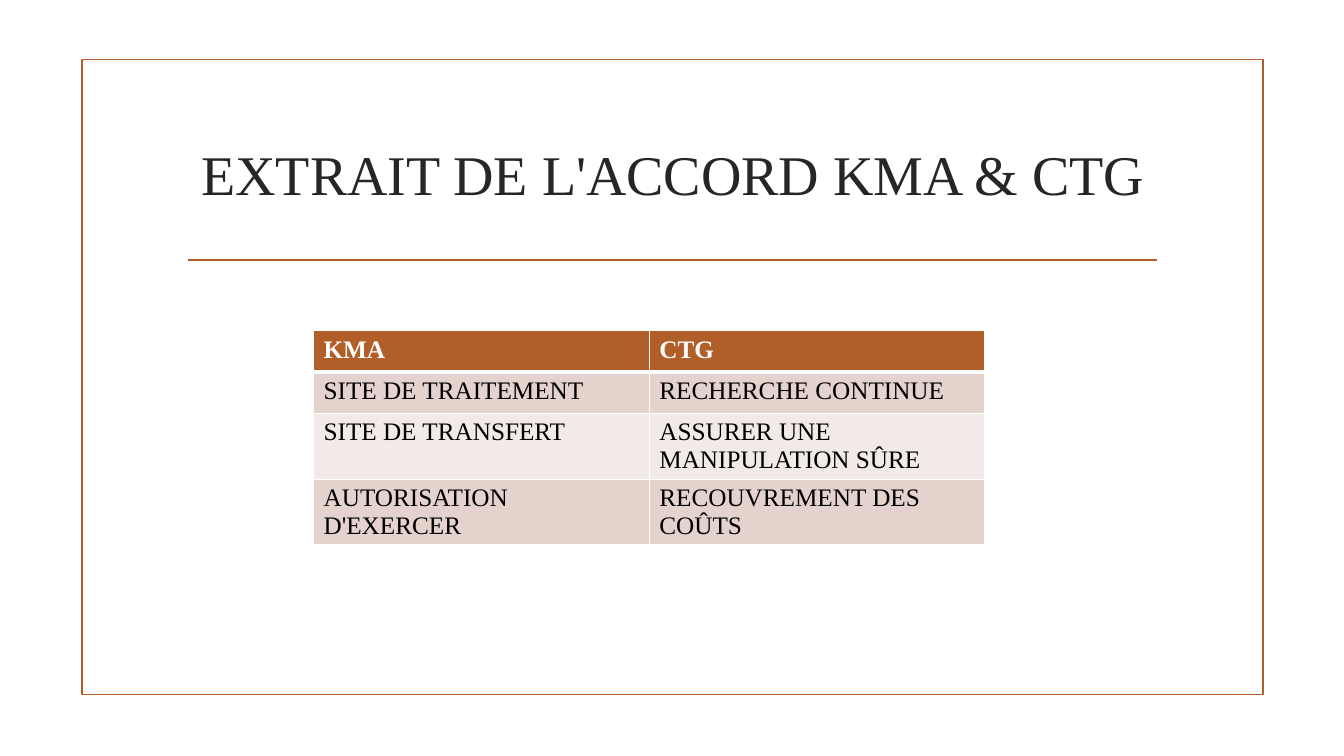
from lxml.etree import SubElement
from pptx import Presentation
from pptx.dml.color import RGBColor
from pptx.enum.shapes import MSO_CONNECTOR as Connector, MSO_SHAPE as Shape
from pptx.enum.text import MSO_ANCHOR as Anchor, PP_ALIGN as Align
from pptx.oxml.ns import qn
from pptx.util import Inches, Pt

COLORS = {
    "accent": "B15E28",
    "title": "262626",
    "text": "000000",
    "white": "FFFFFF",
    "band_dark": "E4D2CD",
    "band_light": "F2EAE8",
}

AGREEMENT = [
    ("KMA", "CTG"),
    ("SITE DE TRAITEMENT", "RECHERCHE CONTINUE"),
    ("SITE DE TRANSFERT", "ASSURER UNE MANIPULATION SÛRE"),
    ("AUTORISATION D'EXERCER", "RECOUVREMENT DES COÛTS"),
]


def rgb(name):
    return RGBColor.from_string(COLORS[name])


class SlideBuilder:
    font = "Times New Roman"
    line_width = Pt(1.25)

    def __init__(self, slide):
        self.slide = slide

    def add_text(self, frame, text, size, color, bold=False, align=Align.LEFT):
        paragraph = frame.paragraphs[0]
        paragraph.alignment = align
        run = paragraph.add_run()
        run.text = text
        run.font.name = self.font
        run.font.size = Pt(size)
        run.font.bold = bold
        run.font.color.rgb = rgb(color)

    def style_line(self, line):
        line.color.rgb = rgb("accent")
        line.width = self.line_width

    def frame(self, left, top, width, height):
        border = self.slide.shapes.add_shape(
            Shape.RECTANGLE, Inches(left), Inches(top), Inches(width), Inches(height))
        border.shadow.inherit = False
        border.fill.background()
        self.style_line(border.line)

    def rule(self, left, right, y):
        divider = self.slide.shapes.add_connector(
            Connector.STRAIGHT, Inches(left), Inches(y), Inches(right), Inches(y))
        self.style_line(divider.line)
        SubElement(divider._element.spPr, qn("a:effectLst"))

    def title(self, text, left, top, width, height):
        heading = self.slide.shapes.title
        heading.left, heading.top = Inches(left), Inches(top)
        heading.width, heading.height = Inches(width), Inches(height)
        heading.text_frame.word_wrap = True
        heading.text_frame.vertical_anchor = Anchor.MIDDLE
        self.add_text(heading.text_frame, text, 40, "title", align=Align.CENTER)

    def cell_borders(self, cell, widths):
        properties = cell._tc.get_or_add_tcPr()
        for side, points in widths.items():
            edge = SubElement(properties, qn(f"a:ln{side}"), w=str(Pt(points)))
            fill = SubElement(edge, qn("a:solidFill"))
            SubElement(fill, qn("a:srgbClr"), val=COLORS["white"])

    def table(self, rows, left, top, col_width, row_height):
        columns = len(rows[0])
        grid = self.slide.shapes.add_table(
            len(rows), columns, Inches(left), Inches(top),
            Inches(col_width * columns), Inches(row_height * len(rows))).table
        for r, row in enumerate(rows):
            header = r == 0
            band = "accent" if header else "band_dark" if r % 2 else "band_light"
            for c, text in enumerate(row):
                cell = grid.cell(r, c)
                # A thicker line separates the header from the body
                self.cell_borders(cell, {"L": 1, "R": 1, "T": 3 if r == 1 else 1,
                                         "B": 3 if header else 1})
                cell.fill.solid()
                cell.fill.fore_color.rgb = rgb(band)
                self.add_text(cell.text_frame, text, 18,
                              "white" if header else "text", bold=header)


def main():
    deck = Presentation()
    deck.slide_width, deck.slide_height = Inches(13.33), Inches(7.5)
    builder = SlideBuilder(deck.slides.add_slide(deck.slide_layouts[5]))

    # Page frame and divider
    builder.frame(0.81, 0.59, 11.72, 6.3)
    builder.rule(1.86, 11.48, 2.58)

    # Title
    builder.title("EXTRAIT DE L'ACCORD KMA & CTG", 1.72, 1, 9.91, 1.43)

    # Agreement table
    builder.table(AGREEMENT, 3.11, 3.28, 3.33, 0.41)

    deck.save("out.pptx")


if __name__ == "__main__":
    main()
